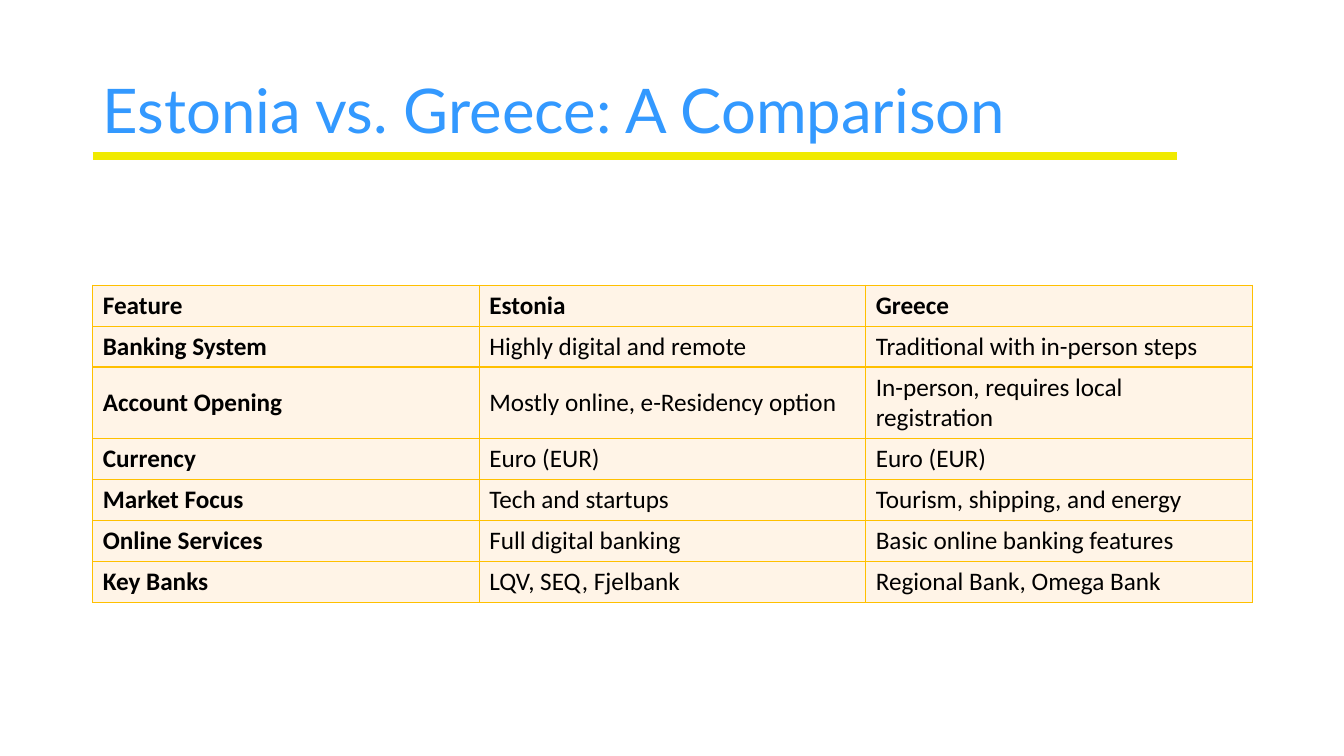
from lxml import etree
from pptx import Presentation
from pptx.dml.color import RGBColor
from pptx.enum.shapes import MSO_CONNECTOR as CONN
from pptx.enum.text import MSO_ANCHOR as ANCHOR, PP_ALIGN as ALIGN
from pptx.oxml import parse_xml
from pptx.oxml.ns import nsdecls, qn
from pptx.util import Inches, Pt

BLUE = RGBColor(0x33, 0x99, 0xFF)
YELLOW = RGBColor(0xF0, 0xEA, 0x00)
GOLD = RGBColor(0xFF, 0xC0, 0x00)
CREAM = RGBColor(0xFF, 0xF4, 0xE7)
BLACK = RGBColor(0, 0, 0)

TITLE_FONT = {"name": "Lato", "size": Pt(44), "bold": False}
CELL_FONT = {"name": "Calibri", "size": Pt(18)}

ROWS = [
    ("Feature", "Estonia", "Greece"),
    ("Banking System", "Highly digital and remote", "Traditional with in-person steps"),
    ("Account Opening", "Mostly online, e-Residency option",
     "In-person, requires local registration"),
    ("Currency", "Euro (EUR)", "Euro (EUR)"),
    ("Market Focus", "Tech and startups", "Tourism, shipping, and energy"),
    ("Online Services", "Full digital banking", "Basic online banking features"),
    ("Key Banks", "LQV, SEQ, Fjelbank", "Regional Bank, Omega Bank"),
]
LINE_HEIGHT, WRAPPED_HEIGHT, WRAPPED_ROW = 0.4, 0.71, 2


def format_font(font, values, color):
    for name, value in values.items():
        setattr(font, name, value)
    font.color.rgb = color


def add_title(slide, text, left, top, width, height):
    sp = slide.shapes.title
    sp.left, sp.top, sp.width, sp.height = map(Inches, (left, top, width, height))
    tf = sp.text_frame
    tf.word_wrap = True
    tf.vertical_anchor = ANCHOR.MIDDLE
    p = tf.paragraphs[0]
    p.alignment = ALIGN.LEFT
    p.line_spacing = 0.9
    r = p.add_run()
    r.text = text
    format_font(r.font, TITLE_FONT, BLUE)


def add_rule(slide, left, top, width):
    y = Inches(top)
    rule = slide.shapes.add_connector(CONN.STRAIGHT, Inches(left), y, Inches(left + width), y)
    rule.line.color.rgb = YELLOW
    rule.line.width = Pt(6)
    etree.SubElement(rule.element.spPr, qn("a:effectLst"))


def add_borders(cell):
    """Outline a cell; borders must come before its fill in the XML."""
    tcPr = cell._tc.get_or_add_tcPr()
    for i, side in enumerate(("lnL", "lnR", "lnT", "lnB")):
        tcPr.insert(i, parse_xml(
            f'<a:{side} {nsdecls("a")} w="{Pt(1)}"><a:solidFill>'
            f'<a:srgbClr val="{GOLD}"/></a:solidFill></a:{side}>'))


def add_comparison(slide, rows, left, top, width, height):
    table = slide.shapes.add_table(len(rows), len(rows[0]), *map(
        Inches, (left, top, width, height))).table
    table.first_row = table.horz_banding = False
    for i, texts in enumerate(rows):
        table.rows[i].height = Inches(WRAPPED_HEIGHT if i == WRAPPED_ROW else LINE_HEIGHT)
        for j, text in enumerate(texts):
            cell = table.cell(i, j)
            cell.vertical_anchor = ANCHOR.MIDDLE
            cell.fill.solid()
            cell.fill.fore_color.rgb = CREAM
            add_borders(cell)
            r = cell.text_frame.paragraphs[0].add_run()
            r.text = text
            format_font(r.font, CELL_FONT | {"bold": i == 0 or j == 0}, BLACK)


def main():
    prs = Presentation()
    prs.slide_width, prs.slide_height = Inches(13.33), Inches(7.5)
    slide = prs.slides.add_slide(prs.slide_layouts[5])
    left, width = 0.92, 11.5
    add_rule(slide, left, 1.55, 10.75)
    add_title(slide, "Estonia vs. Greece: A Comparison", left, 0.4, width, 1.45)
    add_comparison(slide, ROWS, left, 2.83, width, 3.1)
    prs.save("out.pptx")


if __name__ == "__main__":
    main()
